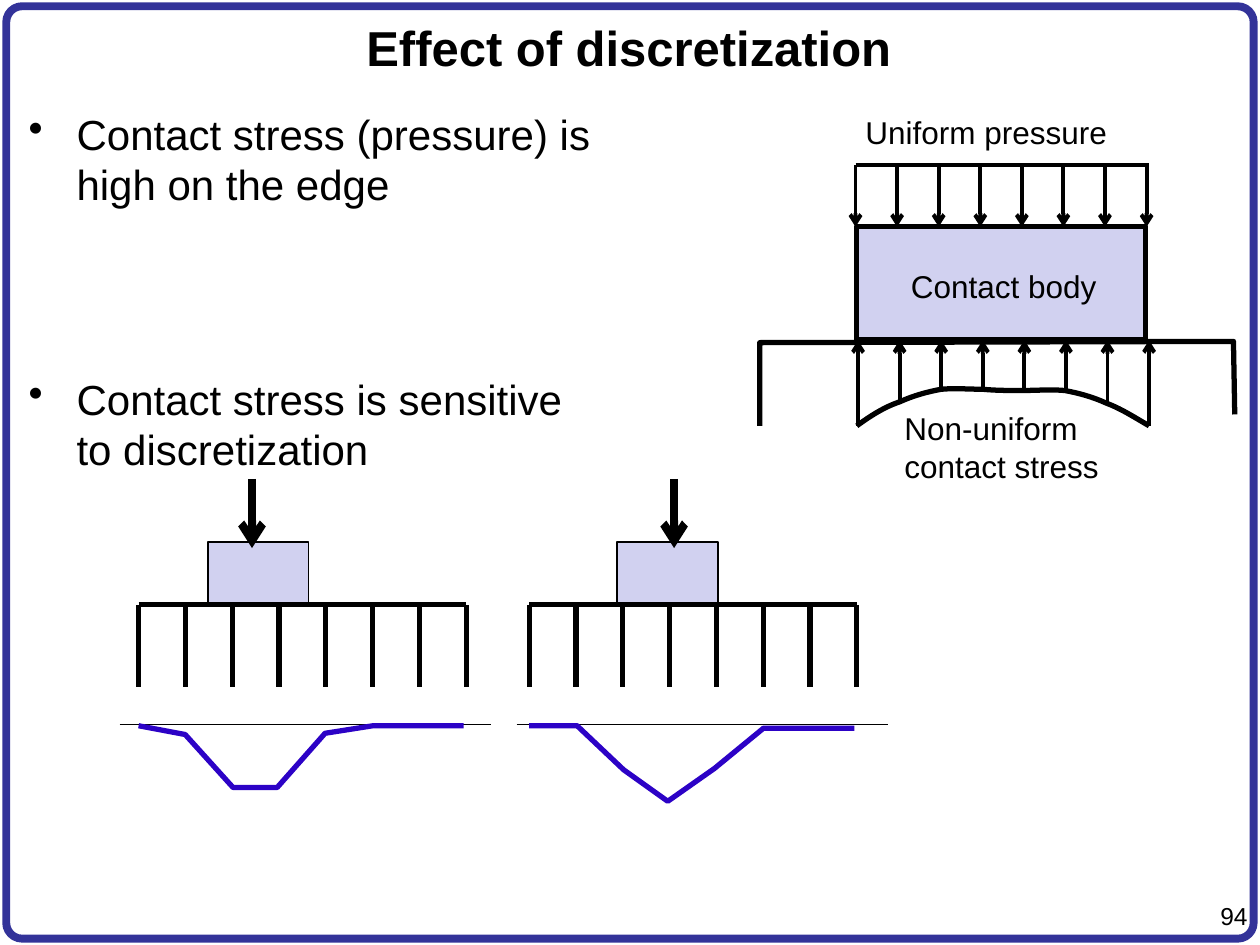
"""Build the slide on how discretization affects contact stress."""
from lxml import etree
from pptx import Presentation
from pptx.dml.color import RGBColor
from pptx.enum import shapes, text
from pptx.oxml import ns
from pptx.util import Inches, Pt

BLACK, NAVY, BLUE, LAVENDER = "000000", "333399", "2C02C6", "D1D1F0"

presentation = Presentation()
presentation.slide_width, presentation.slide_height = Inches(10), Inches(7.5)
slide = presentation.slides.add_slide(presentation.slide_layouts[6])


def color(value):
    return RGBColor.from_string(value)


def add_line(start, end, width, arrow=False):
    points = [Inches(value) for value in (*start, *end)]
    connector = slide.shapes.add_connector(shapes.MSO_CONNECTOR.STRAIGHT, *points)
    connector.line.color.rgb = color(BLACK)
    connector.line.width = Pt(width)
    if arrow:
        etree.SubElement(connector.line._get_or_add_ln(), ns.qn("a:tailEnd"), type="arrow")
    etree.SubElement(connector._element.spPr, ns.qn("a:effectLst"))


# left, top, width, height, fill, line color, line width
boxes = [
    (0.05, 0.05, 9.9, 7.4, None, NAVY, 4.5),
    (6.8, 1.8, 2.29, 0.9, LAVENDER, BLACK, 3),
    (1.65, 4.3, 0.8, 0.5, LAVENDER, BLACK, 1),
    (4.9, 4.3, 0.8, 0.5, LAVENDER, BLACK, 1),
]
for *box, fill, line_color, width in boxes:
    preset = shapes.MSO_SHAPE.RECTANGLE if fill else shapes.MSO_SHAPE.ROUNDED_RECTANGLE
    shape = slide.shapes.add_shape(preset, *map(Inches, box))
    shape.shadow.inherit = False
    shape.line.color.rgb = color(line_color)
    shape.line.width = Pt(width)
    if fill:
        shape.fill.solid()
        shape.fill.fore_color.rgb = color(fill)
    else:
        shape.fill.background()
        shape.adjustments[0] = 0.017

for index in range(8):
    x = 6.79 + index * 0.33
    stress_end = (3.38, 3.2, 3.11, 3.11)[min(index, 7 - index)]
    add_line((x, 1.31), (x, 1.8), 2.25, arrow=True)
    add_line((x + 0.02, stress_end), (x + 0.02, 2.7), 2.25, arrow=True)
add_line((6.79, 1.31), (9.12, 1.31), 2.25)

# mesh left, baseline left, load position
for mesh_left, baseline_left, load_x in [(1.1, 0.95, 2), (4.2, 4.1, 5.35)]:
    for index in range(8):
        x = mesh_left + index * 2.6 / 7
        add_line((x, 4.8), (x, 5.45), 3)
    add_line((mesh_left, 4.8), (mesh_left + 2.6, 4.8), 3)
    add_line((baseline_left, 5.75), (baseline_left + 2.95, 5.75), 1)
    add_line((load_x, 3.8), (load_x, 4.35), 4.5, arrow=True)

foundation = [(6.03, 3.38), (6.03, 2.72), (9.79, 2.71), (9.8, 3.29)]
stress_curve = [
    (6.8, 3.38), (6.91, 3.3), (7.02, 3.23), (7.14, 3.19), (7.25, 3.14), (7.36, 3.11),
    (7.47, 3.09), (7.58, 3.08), (7.69, 3.09), (7.8, 3.09), (7.9, 3.1), (8, 3.1),
    (8.11, 3.1), (8.22, 3.1), (8.34, 3.09), (8.45, 3.1), (8.56, 3.12), (8.67, 3.15),
    (8.78, 3.2), (8.89, 3.24), (9, 3.31), (9.12, 3.38),
]
coarse_stress = [(1.1, 5.76), (1.47, 5.83), (1.85, 6.25), (2.2, 6.25),
                 (2.58, 5.82), (2.96, 5.76), (3.33, 5.76), (3.68, 5.76)]
peaked_stress = [(4.2, 5.76), (4.58, 5.76), (4.95, 6.11), (5.3, 6.36),
                 (5.67, 6.1), (6.06, 5.78), (6.43, 5.78), (6.78, 5.78)]
outlines = [(foundation, BLACK, False), (stress_curve, BLACK, True),
            (coarse_stress, BLUE, False), (peaked_stress, BLUE, False)]
for points, line_color, curved in outlines:
    corners = [(Inches(x), Inches(y)) for x, y in points]
    builder = slide.shapes.build_freeform(*corners[0])
    builder.add_line_segments(corners[1:], close=False)
    shape = builder.convert_to_shape()
    shape.shadow.inherit = False
    shape.fill.background()
    shape.line.color.rgb = color(line_color)
    shape.line.width = Pt(3)
    if curved:
        segments = list(shape._element.iter(ns.qn("a:lnTo")))
        outline = segments[0].getparent()
        for first in range(0, len(segments), 3):
            bezier = etree.SubElement(outline, ns.qn("a:cubicBezTo"))
            for segment in segments[first:first + 3]:
                bezier.append(segment[0])
                outline.remove(segment)

LEFT, CENTER, RIGHT = text.PP_ALIGN.LEFT, text.PP_ALIGN.CENTER, text.PP_ALIGN.RIGHT
bullets = ["Contact stress (pressure) is\vhigh on the edge",
           "Contact stress is sensitive\vto discretization"]
# left, top, width, height, paragraphs, size, alignment, wrap
labels = [
    (0.04, 0.05, 9.9, 0.65, ["Effect of discretization"], 28, CENTER, True),
    (0.13, 0.81, 9.74, 6.42, bullets, 24, LEFT, True),
    (7.12, 2.07, 1.69, 0.4, ["Contact body"], 18, CENTER, False),
    (6.77, 0.85, 2.14, 0.4, ["Uniform pressure"], 18, LEFT, False),
    (7.08, 3.2, 1.76, 0.71, ["Non-uniform\vcontact stress"], 18, LEFT, False),
    (9.46, 7.1, 0.54, 0.33, ["94"], 14, RIGHT, True),
]
for *box, lines, size, alignment, wrap in labels:
    frame = slide.shapes.add_textbox(*map(Inches, box)).text_frame
    frame.word_wrap = wrap
    frame.text = "\n".join(lines)
    if size == 28:
        frame.vertical_anchor = text.MSO_ANCHOR.MIDDLE
    for index, paragraph in enumerate(frame.paragraphs):
        paragraph.alignment = alignment
        if lines is bullets:
            paragraph.space_before = Pt((12, 94)[index])
            properties = paragraph._p.get_or_add_pPr()
            properties.set("marL", str(Inches(0.38)))
            properties.set("indent", str(Inches(-0.38)))
            etree.SubElement(properties, ns.qn("a:buChar"), char="•")
        paragraph.font.name = "Arial"
        paragraph.font.size = Pt(size)
        paragraph.font.bold = size == 28
        paragraph.font.color.rgb = color(BLACK)

presentation.save("out.pptx")
